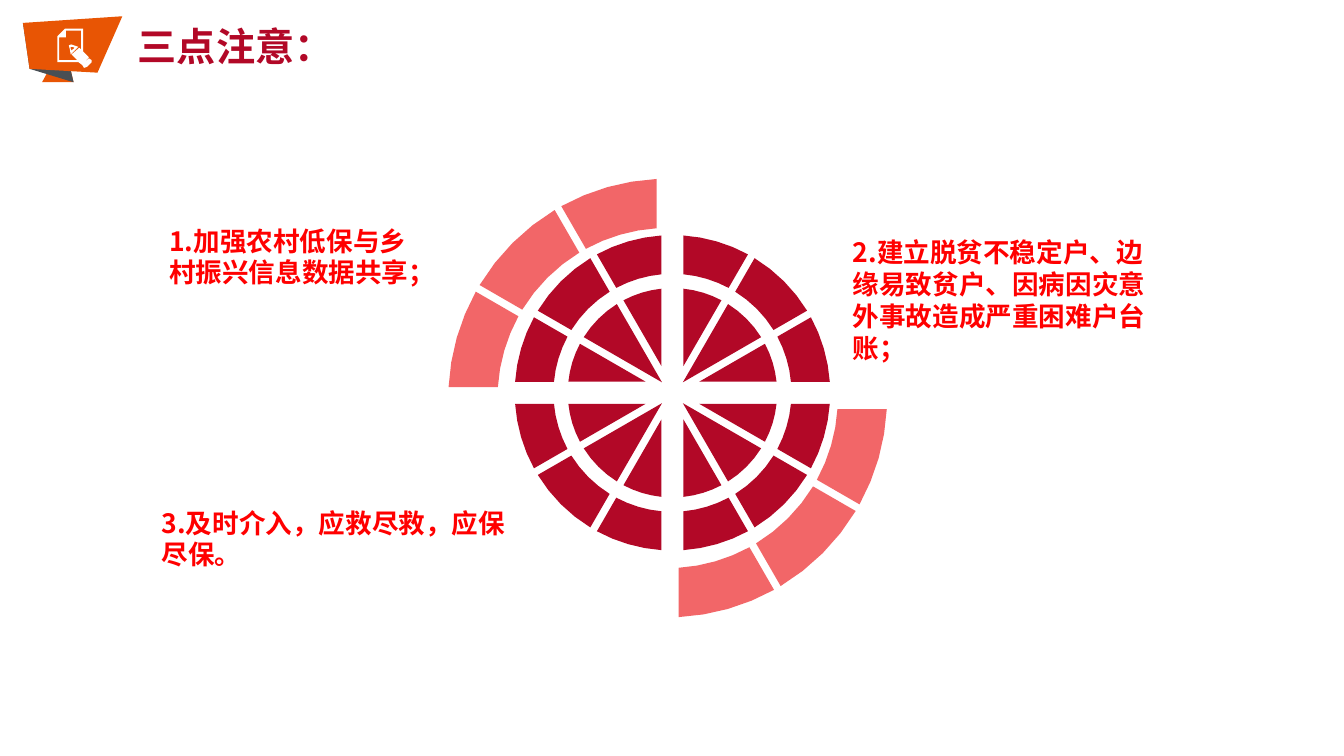
from dataclasses import dataclass
from math import asin, cos, radians, sin

from lxml import etree
from pptx import Presentation
from pptx.dml.color import RGBColor
from pptx.enum.text import MSO_ANCHOR, MSO_AUTO_SIZE, PP_ALIGN
from pptx.oxml.ns import qn
from pptx.util import Inches, Pt

CRIMSON = RGBColor(0xB2, 0x08, 0x27)
CORAL = RGBColor(0xF2, 0x66, 0x68)
RED = RGBColor(0xFF, 0x00, 0x00)
ORANGE = RGBColor(0xE8, 0x55, 0x04)
SLATE = RGBColor(0x49, 0x4F, 0x54)
WHITE = RGBColor(0xFF, 0xFF, 0xFF)

FONT = "Noto Sans CJK SC"
TITLE_LAYOUT = 5
TOP = MSO_ANCHOR.TOP
MIDDLE = MSO_ANCHOR.MIDDLE
LEFT = PP_ALIGN.LEFT
NO_AUTOFIT = MSO_AUTO_SIZE.NONE

# All lengths below are columns and rows of a square grid with this cell.
CELL = Inches(0.1)
SLIDE_COLUMNS, SLIDE_ROWS = 140.6, 79.1

SECTOR_DEGREES = 30
CROSS_GAP = 1.15  # from an axis of the wheel to the nearest sector edge
SPOKE_GAP = 0.4   # from a spoke to the nearest sector edge
ARC_STEPS = 4


Point = tuple[float, float]
Contour = list[Point]


@dataclass(frozen=True)
class Ring:
    center: Point
    inner_radius: float
    outer_radius: float
    quadrants: tuple[int, ...]
    color: RGBColor


@dataclass(frozen=True)
class Note:
    left: float
    top: float
    width: float
    height: float
    text: str


@dataclass(frozen=True)
class Figure:
    contours: list[Contour]
    color: RGBColor


ALL_QUADRANTS = (0, 90, 180, 270)
RINGS = (
    Ring((69.85, 41.65), 17.8, 22.95, (0, 180), CORAL),
    Ring((70.35, 41.1), 12.45, 16.5, ALL_QUADRANTS, CRIMSON),
    Ring((70.35, 41.1), 0, 10.95, ALL_QUADRANTS, CRIMSON),
)

NOTES = (
    Note(16.8, 23, 29, 11, "1.加强农村低保与乡村振兴信息数据共享；"),
    Note(16, 52.5, 39, 7.7, "3.及时介入，应救尽救，应保尽保。"),
    Note(88.3, 24.2, 33.2, 14.4,
         "2.建立脱贫不稳定户、边缘易致贫户、因病因灾意外事故造成严重困难户台账；"),
)

PAGE_OUTLINE = [(6.8, 3), (8.7, 3), (8.7, 5.4), (9.3, 6), (8.6, 6.8), (8.2, 6.5),
                (6, 6.5), (6, 3.8)]
PAGE_INSIDE = [(6.9, 3.2), (8.5, 3.2), (8.5, 5.2), (8.3, 5), (7.5, 5.7), (8.1, 6.3),
               (6.2, 6.3), (6.2, 3.9), (6.9, 3.9)]
PENCIL_TIP = [(7.2, 4.75), (7.45, 4.65), (8.2, 4.9), (7.4, 5.7), (7.3, 5.1)]
PENCIL_LEAD = [(7.4, 4.9), (7.6, 4.9), (7.8, 5), (7.5, 5.3), (7.4, 5.1)]
PENCIL_END = [(9.3, 6.1), (9.6, 6.3), (9.6, 6.5), (9.1, 7), (8.8, 7.1), (8.6, 6.8)]

BADGE = (
    Figure([[(7.7, 8.6), (6.7, 4.4), (4.4, 8.6)]], ORANGE),
    Figure([[(6.7, 4.4), (2.4, 2.4), (3.1, 7.2), (7.7, 8.6)]], SLATE),
    Figure([[(12.8, 1.7), (2.4, 2.4), (3.1, 7.2), (10.2, 7.6)]], ORANGE),
    Figure([PAGE_OUTLINE, PAGE_INSIDE, PENCIL_TIP, PENCIL_LEAD, PENCIL_END], WHITE),
)


def cells(count: float) -> int:
    return round(count * CELL)


def draw_figure(slide, figure: Figure) -> None:
    """Draw all contours as one freeform, inner contours being holes."""
    builder = None
    for contour in figure.contours:
        start, *rest = [(cells(x), cells(y)) for x, y in contour]
        if builder is None:
            builder = slide.shapes.build_freeform(*start)
        else:
            builder.move_to(*start)
        builder.add_line_segments(rest, close=True)
    shape = builder.convert_to_shape()
    shape.shadow.inherit = False
    shape.fill.solid()
    shape.fill.fore_color.rgb = figure.color
    shape.line.fill.background()


def edge_gap(degrees: int) -> float:
    return SPOKE_GAP if degrees % 90 else CROSS_GAP


def sector(ring: Ring, start_degrees: int) -> Contour:
    """Outline one sector whose straight edges run parallel to its spokes."""
    end_degrees = start_degrees + SECTOR_DEGREES
    start, end = radians(start_degrees), radians(end_degrees)
    start_gap, end_gap = edge_gap(start_degrees), edge_gap(end_degrees)
    center_x, center_y = ring.center

    def arc(radius: float) -> Contour:
        first = start + asin(start_gap / radius)
        last = end - asin(end_gap / radius)
        angles = [first + (last - first) * step / ARC_STEPS for step in range(ARC_STEPS + 1)]
        return [(center_x + radius * cos(angle), center_y + radius * sin(angle))
                for angle in angles]

    if ring.inner_radius:
        inside = arc(ring.inner_radius)[::-1]
    else:
        spread = sin(end - start)
        inside = [(center_x + (start_gap * cos(end) + end_gap * cos(start)) / spread,
                   center_y + (start_gap * sin(end) + end_gap * sin(start)) / spread)]
    return arc(ring.outer_radius) + inside


def draw_ring(slide, ring: Ring) -> None:
    contours = [sector(ring, quadrant + offset)
                for quadrant in ring.quadrants
                for offset in range(0, 90, SECTOR_DEGREES)]
    draw_figure(slide, Figure(contours, ring.color))


def write_text(shape, text: str, size: float, color: RGBColor, anchor):
    frame = shape.text_frame
    frame.word_wrap = True
    frame.auto_size = NO_AUTOFIT
    frame.vertical_anchor = anchor
    paragraph = frame.paragraphs[0]
    paragraph.alignment = LEFT
    run = paragraph.add_run()
    run.text = text
    run.font.size = Pt(size)
    run.font.bold = True
    run.font.color.rgb = color
    run.font.name = FONT
    etree.SubElement(run._r.get_or_add_rPr(), qn("a:ea")).set("typeface", FONT)
    return paragraph


def draw_note(slide, note: Note) -> None:
    box = slide.shapes.add_textbox(
        cells(note.left), cells(note.top), cells(note.width), cells(note.height))
    box.text_frame.margin_left = box.text_frame.margin_right = Inches(0.09)
    paragraph = write_text(box, note.text, 20, RED, TOP)
    paragraph.line_spacing = Pt(24)


def draw_title(slide) -> None:
    title = slide.shapes.title
    title.left, title.top = cells(13.4), cells(1.8)
    title.width, title.height = cells(58.1), cells(6)
    write_text(title, "三点注意：", 29.5, CRIMSON, MIDDLE)


def main() -> None:
    presentation = Presentation()
    presentation.slide_width = cells(SLIDE_COLUMNS)
    presentation.slide_height = cells(SLIDE_ROWS)
    slide = presentation.slides.add_slide(presentation.slide_layouts[TITLE_LAYOUT])
    for ring in RINGS:
        draw_ring(slide, ring)
    for note in NOTES:
        draw_note(slide, note)
    for figure in BADGE:
        draw_figure(slide, figure)
    draw_title(slide)
    presentation.save("out.pptx")


if __name__ == "__main__":
    main()
